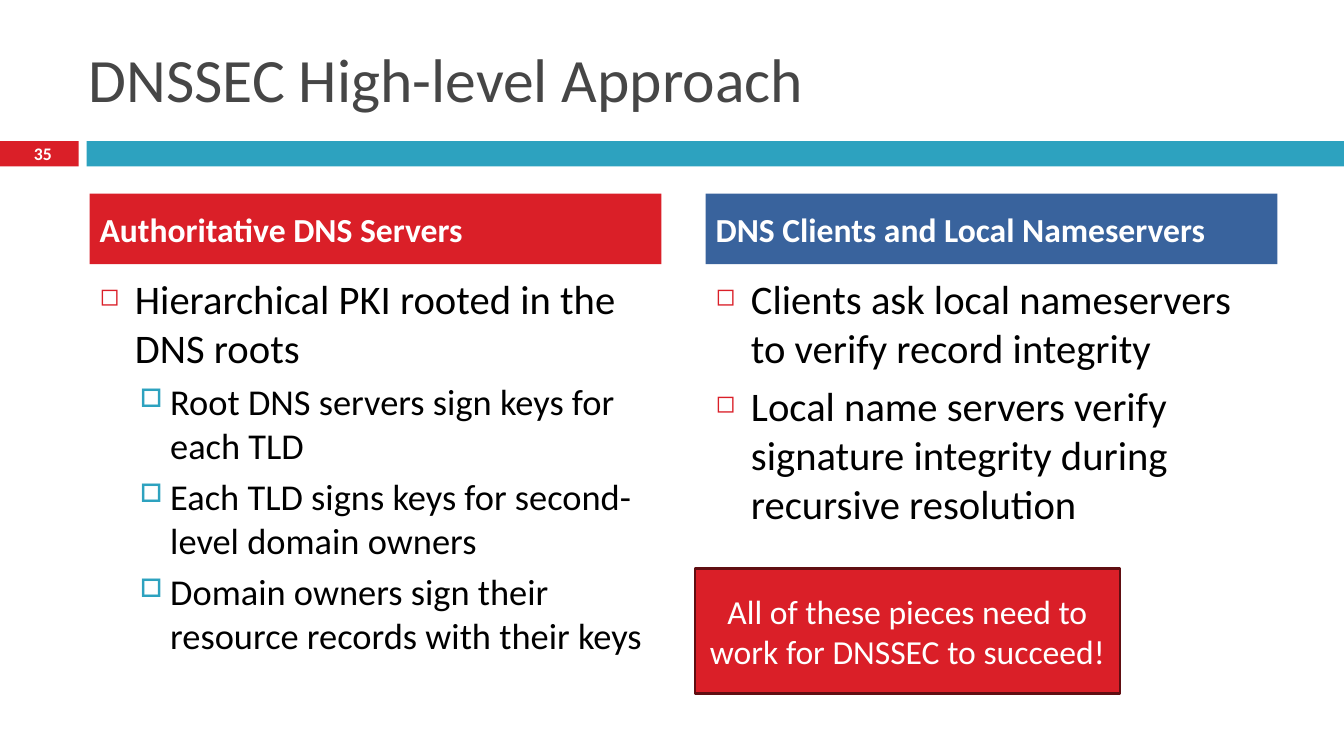
from dataclasses import dataclass

from lxml import etree
from pptx import Presentation
from pptx.dml.color import RGBColor
from pptx.enum.shapes import MSO_SHAPE
from pptx.enum.text import MSO_ANCHOR, PP_ALIGN
from pptx.oxml.ns import qn
from pptx.util import Inches, Pt

RECT = MSO_SHAPE.RECTANGLE
TOP, MIDDLE = MSO_ANCHOR.TOP, MSO_ANCHOR.MIDDLE
LEFT, CENTER = PP_ALIGN.LEFT, PP_ALIGN.CENTER


@dataclass(frozen=True)
class Theme:
    font: str = "Calibri"
    red: str = "DA1F28"
    teal: str = "2DA2BF"
    blue: str = "39639D"
    edge: str = "600E12"
    gray: str = "464646"
    black: str = "000000"
    white: str = "FFFFFF"
    title: float = 44
    head: float = 24
    page: float = 12.6


THEME = Theme()

# Per level: size, space before, left indent, hang, bullet, colour, percent
LEVELS = (
    (29, 7, 0.35, 0.35, "◻", THEME.red, 60),
    (26, 5.5, 0.7, 0.3, "□", THEME.teal, 70),
)

COLUMNS = (
    (0.89, THEME.red, "Authoritative DNS Servers", (
        (0, "Hierarchical PKI rooted in the DNS roots"),
        (1, "Root DNS servers sign keys for each TLD"),
        (1, "Each TLD signs keys for second-level domain owners"),
        (1, "Domain owners sign their resource records with their keys"),
    )),
    (7, THEME.blue, "DNS Clients and Local Nameservers", (
        (0, "Clients ask local nameservers to verify record integrity"),
        (0, "Local name servers verify signature integrity during "
            "recursive resolution"),
    )),
)
WIDTH = 5.67


def style(obj, values):
    for name, value in values.items():
        setattr(obj, name, value)


def add_bar(slide, box, fill, edge=None):
    bar = slide.shapes.add_shape(RECT, *map(Inches, box))
    bar.shadow.inherit = False
    bar.fill.solid()
    bar.fill.fore_color.rgb = RGBColor.from_string(fill)
    if edge:
        bar.line.color.rgb = RGBColor.from_string(edge)
        bar.line.width = Pt(1.5)
    else:
        bar.line.fill.background()
    return bar


def add_box(slide, box):
    return slide.shapes.add_textbox(*map(Inches, box))


def write(para, text, size, color, bold=False, align=LEFT):
    para.alignment = align
    run = para.add_run()
    run.text = text
    style(run.font, {"name": THEME.font, "size": Pt(size), "bold": bold})
    run.font.color.rgb = RGBColor.from_string(color)


def label(shape, text, size, color, **look):
    """Put one vertically centred line of text in a shape."""
    frame = shape.text_frame
    style(frame, {"word_wrap": True, "vertical_anchor": MIDDLE})
    write(frame.paragraphs[0], text, size, color, **look)


def add_bullet(para, mark, color, percent, left, hang):
    props = para._p.get_or_add_pPr()
    props.set("marL", str(Inches(left)))
    props.set("indent", str(-Inches(hang)))
    tint = etree.SubElement(props, qn("a:buClr"))
    etree.SubElement(tint, qn("a:srgbClr"), val=color)
    etree.SubElement(props, qn("a:buSzPct"), val=str(percent * 1000))
    etree.SubElement(props, qn("a:buChar"), char=mark)


def add_list(slide, box, items):
    frame = add_box(slide, box).text_frame
    style(frame, {"word_wrap": True, "vertical_anchor": TOP})
    for i, (level, text) in enumerate(items):
        size, gap, left, hang, mark, color, percent = LEVELS[level]
        para = frame.add_paragraph() if i else frame.paragraphs[0]
        style(para, {"level": level, "space_before": Pt(gap)})
        add_bullet(para, mark, color, percent, left, hang)
        write(para, text, size, THEME.black)


def add_column(slide, left, fill, head, items):
    add_list(slide, (left, 2.67, WIDTH, 3.92), items)
    bar = add_bar(slide, (left, 1.92, WIDTH, 0.7), fill)
    label(bar, head, THEME.head, THEME.white, bold=True)


def main():
    deck = Presentation()
    style(deck, {"slide_width": Inches(13.33), "slide_height": Inches(7.5)})
    slide = deck.slides.add_slide(deck.slide_layouts[6])

    add_bar(slide, (0, 1.4, 0.78, 0.25), THEME.red)
    add_bar(slide, (0.86, 1.4, 12.47, 0.25), THEME.teal)
    title = add_box(slide, (0.78, 0.3, 11.89, 0.95))
    label(title, "DNSSEC High-level Approach", THEME.title, THEME.gray)
    page = add_box(slide, (-0.01, 1.38, 0.87, 0.29))
    label(page, "35", THEME.page, THEME.white, bold=True, align=CENTER)

    for column in COLUMNS:
        add_column(slide, *column)

    note = add_bar(slide, (6.89, 5.64, 4.22, 1.24), THEME.red, THEME.edge)
    label(note, "All of these pieces need to work for DNSSEC to succeed!",
          THEME.head, THEME.white, align=CENTER)
    deck.save("out.pptx")


if __name__ == "__main__":
    main()
